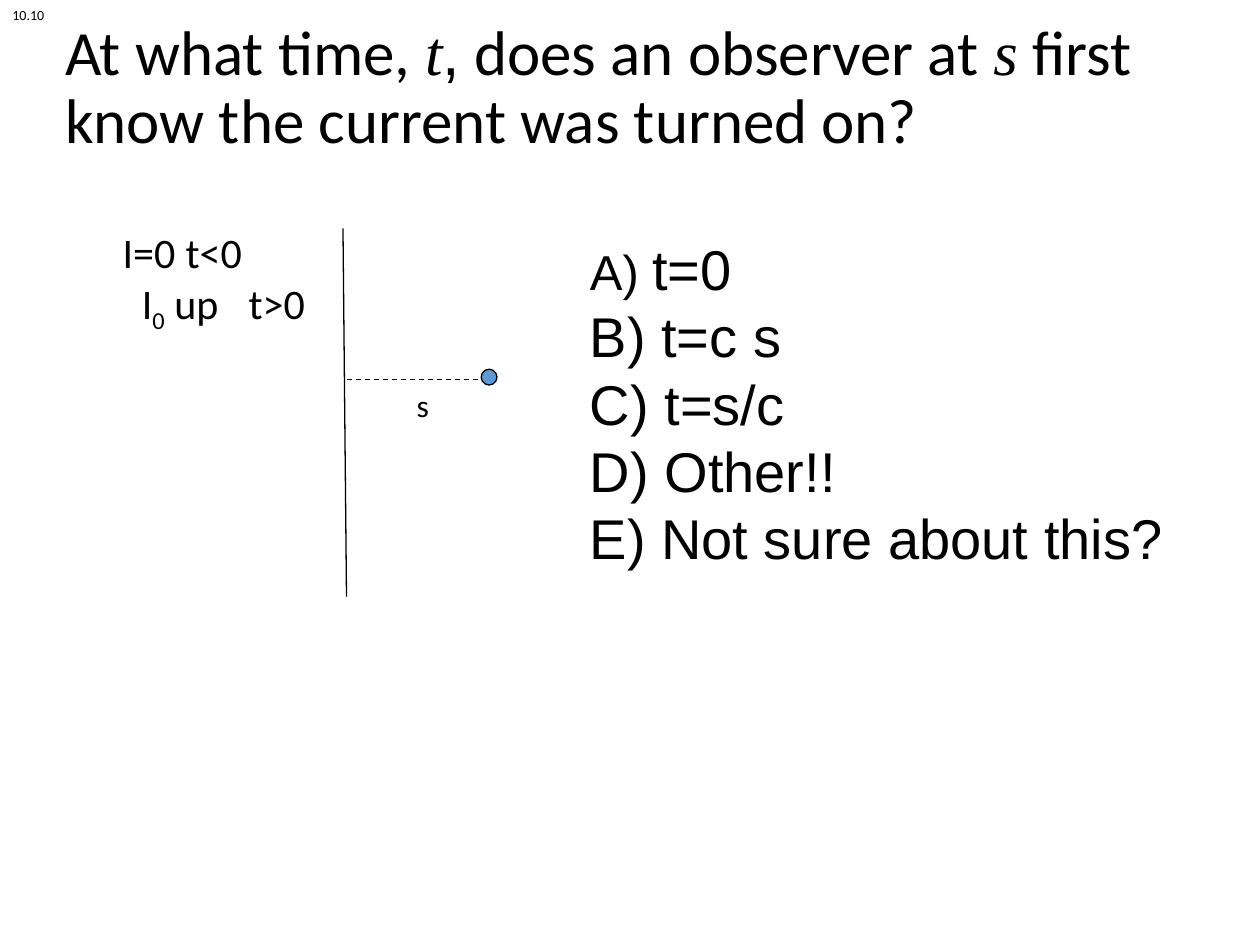
from lxml import etree
from pptx import Presentation
from pptx.dml.color import RGBColor as RGB
from pptx.enum.dml import MSO_LINE as Dash
from pptx.enum.shapes import MSO_CONNECTOR as Conn, MSO_SHAPE as Shape
from pptx.enum.text import MSO_ANCHOR as Anchor, MSO_AUTO_SIZE as Auto, PP_ALIGN as Align
from pptx.oxml.ns import qn
from pptx.util import Pt

COL = {"ink": "000000", "dot": "5B9BD5"}
INK = RGB.from_string(COL["ink"])


def write(para, runs, name, size):
    for text, look in runs:
        run = para.add_run()
        run.text = text
        run.font.color.rgb = INK
        for key, val in {"name": name, "size": Pt(size), **look}.items():
            setattr(run.font, key, val)


def add_box(left, top, width, height, wrap):
    box = slide.shapes.add_textbox(Pt(left), Pt(top), Pt(width), Pt(height))
    box.text_frame.word_wrap = wrap
    return box.text_frame


prs = Presentation()
prs.slide_width, prs.slide_height = Pt(720), Pt(540)
slide = prs.slides.add_slide(prs.slide_layouts[5])

title = slide.shapes.title
place = {"left": 30, "top": 12, "width": 654, "height": 78}
for key, val in place.items():
    setattr(title, key, Pt(val))
frame = title.text_frame
look = {"auto_size": Auto.NONE, "word_wrap": True, "vertical_anchor": Anchor.MIDDLE}
for key, val in look.items():
    setattr(frame, key, val)
para = frame.paragraphs[0]
para.alignment = Align.LEFT
para.line_spacing = 0.9
math = {"name": "Times New Roman", "italic": True}
write(para, [
    ("At what time, ", {}), ("t", math), (",", {"name": "Arial"}),
    (" does an observer at ", {}), ("s", math),
    (" first know the current was turned on?", {}),
], "Calibri", 36)

frame = add_box(330, 130.5, 390, 201, True)
picks = ["t=0", " t=c s", " t=s/c", " Other!!", " Not sure about this?"]
for num, text in enumerate(picks):
    para = frame.paragraphs[0] if num == 0 else frame.add_paragraph()
    lead = [(" ", {"size": Pt(28)})] if num == 0 else []
    write(para, lead + [(text, {})], "Arial", 32)
    props = para._p.get_or_add_pPr()
    props.set("marL", str(Pt(27)))
    props.set("indent", str(-Pt(27)))
    etree.SubElement(props, qn("a:buFont")).set("typeface", "Arial")
    etree.SubElement(props, qn("a:buAutoNum")).set("type", "alphaUcParenR")

lines = [
    (198, 341, 196, 130.5, Dash.SOLID),
    (198, 217, 275, 217, Dash.DASH),
]
for *ends, dash in lines:
    wire = slide.shapes.add_connector(Conn.STRAIGHT, *map(Pt, ends))
    wire.line.color.rgb = INK
    wire.line.width = Pt(0.75)
    wire.line.dash_style = dash
    etree.SubElement(wire._element.spPr, qn("a:effectLst"))

dot = slide.shapes.add_shape(Shape.OVAL, Pt(275), Pt(211), Pt(9), Pt(9))
dot.shadow.inherit = False
dot.fill.solid()
dot.fill.fore_color.rgb = RGB.from_string(COL["dot"])
dot.line.color.rgb = INK
dot.line.width = Pt(0.75)

labels = [("s", 231, 217, 24, 29, 18), ("10.10", 0, 0, 33, 17, 8)]
for text, left, top, width, height, size in labels:
    frame = add_box(left, top, width, height, False)
    write(frame.paragraphs[0], [(text, {})], "Calibri", size)

frame = add_box(63, 126, 126, 66, True)
states = [
    (0, 62.5, [("I=0\tt<0", {})]),
    (11, 65.5, [("I", {}), ("0", {"sub": True}), (" up\tt>0", {})]),
]
for num, (indent, stop, runs) in enumerate(states):
    para = frame.paragraphs[0] if num == 0 else frame.add_paragraph()
    plain = [(text, {}) for text, look in runs]
    write(para, plain, "Calibri", 24)
    for run, (text, look) in zip(para.runs, runs):
        if look:
            run.font._element.set("baseline", "-25000")
    props = para._p.get_or_add_pPr()
    props.set("marL", "0")
    props.set("indent", str(Pt(indent)))
    tabs = etree.SubElement(props, qn("a:tabLst"))
    etree.SubElement(tabs, qn("a:tab"), pos=str(Pt(stop)), algn="l")

prs.save("out.pptx")
